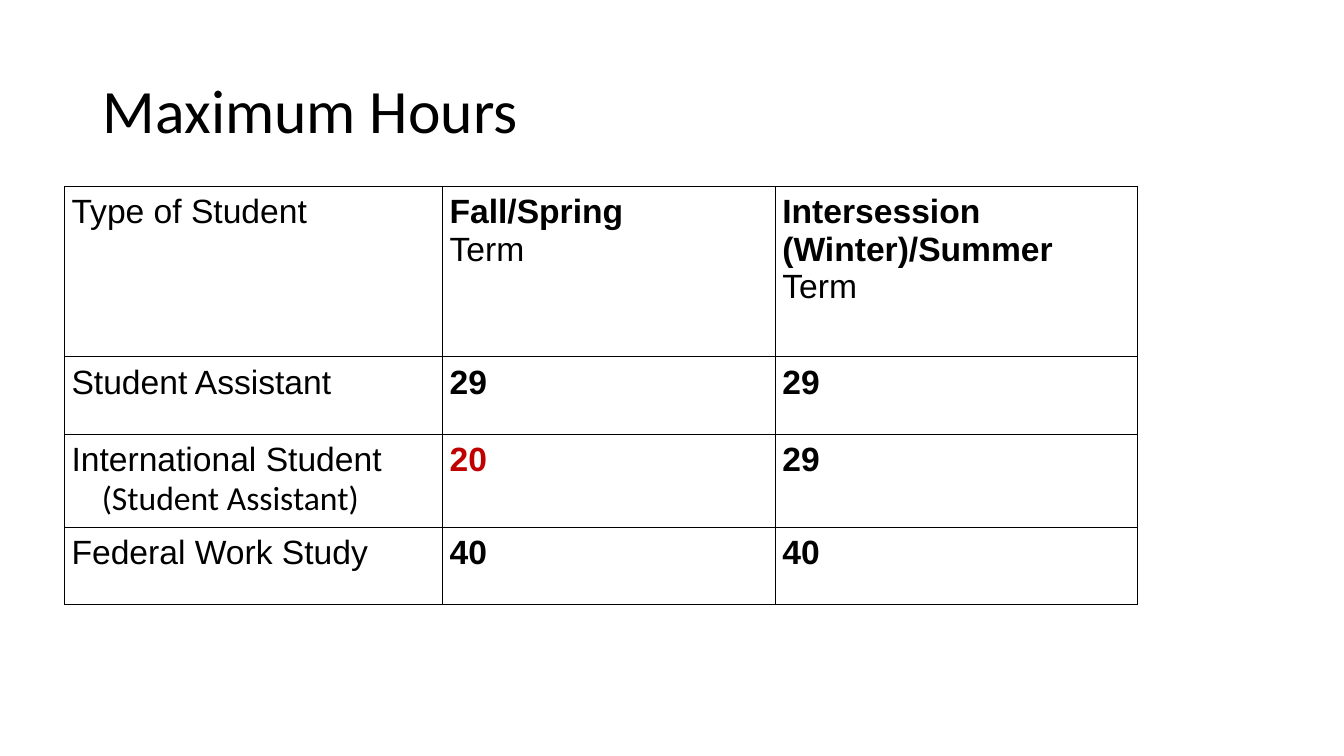
from dataclasses import dataclass

from lxml import etree
from pptx import Presentation
from pptx import util as u
from pptx.dml.color import RGBColor
from pptx.enum import text
from pptx.oxml import ns


@dataclass(frozen=True)
class Theme:
    ink: str = "000000"
    alert: str = "C00000"
    heading_font: str = "Calibri"
    body_font: str = "Arial"
    heading_size: int = 44
    body_size: int = 24
    border: float = 0.75
    inset: float = 0.07
    indent: float = 0.3


theme = Theme()


def write(paragraph, words, face, size, color=theme.ink, bold=False):
    run = paragraph.add_run()
    run.text = words
    looks = {"name": face, "size": u.Pt(size), "bold": bold}
    for key, value in looks.items():
        setattr(run.font, key, value)
    run.font.color.rgb = RGBColor.from_string(color)


def outline(cell):
    properties = cell._tc.get_or_add_tcPr()
    for side in ("lnL", "lnR", "lnT", "lnB"):
        edge = etree.SubElement(properties, ns.qn(f"a:{side}"), w=str(u.Pt(theme.border)))
        paint = etree.SubElement(edge, ns.qn("a:solidFill"))
        etree.SubElement(paint, ns.qn("a:srgbClr"), val=theme.ink)


deck = Presentation()
deck.slide_width, deck.slide_height = u.Inches(13.33), u.Inches(7.5)
slide = deck.slides.add_slide(deck.slide_layouts[5])

heading = slide.shapes.title
place = {"left": 0.92, "top": 0.4, "width": 11.5, "height": 1.45}
for key, value in place.items():
    setattr(heading, key, u.Inches(value))
heading.text_frame.vertical_anchor = text.MSO_ANCHOR.MIDDLE
heading_line = heading.text_frame.paragraphs[0]
heading_line.alignment = text.PP_ALIGN.LEFT
heading_line.line_spacing = 0.9
write(heading_line, "Maximum Hours", theme.heading_font, theme.heading_size)

plain = {"face": theme.body_font}
strong = {**plain, "bold": True}
limit = {**strong, "color": theme.alert}
note = {"face": theme.heading_font}

hours = [
    [
        [("Type of Student", plain)],
        [("Fall/Spring", strong), ("Term", plain)],
        [("Intersession", strong), ("(Winter)/Summer", strong), ("Term", plain)],
    ],
    [[("Student Assistant", plain)], [("29", strong)], [("29", strong)]],
    [
        [("International Student", plain), ("(Student Assistant)", note)],
        [("20", limit)],
        [("29", strong)],
    ],
    [[("Federal Work Study", plain)], [("40", strong)], [("40", strong)]],
]
column_widths = [3.75, 3.3, 3.59]
row_heights = [1.69, 0.77, 0.92, 0.77]

grid = slide.shapes.add_table(
    len(row_heights), len(column_widths), u.Inches(0.64), u.Inches(1.85),
    u.Inches(sum(column_widths)), u.Inches(sum(row_heights)),
).table
grid.first_row = grid.horz_banding = False
for column, width in zip(grid.columns, column_widths):
    column.width = u.Inches(width)

for row, height, entries in zip(grid.rows, row_heights, hours):
    row.height = u.Inches(height)
    for cell, lines in zip(row.cells, entries):
        for side in ("left", "right", "top", "bottom"):
            setattr(cell, f"margin_{side}", u.Inches(theme.inset))
        outline(cell)
        cell.fill.background()
        for number, (words, look) in enumerate(lines):
            frame = cell.text_frame
            paragraph = frame.add_paragraph() if number else frame.paragraphs[0]
            if look is note:
                paragraph._p.get_or_add_pPr().set("marL", str(u.Inches(theme.indent)))
            write(paragraph, words, size=theme.body_size, **look)

deck.save("out.pptx")
